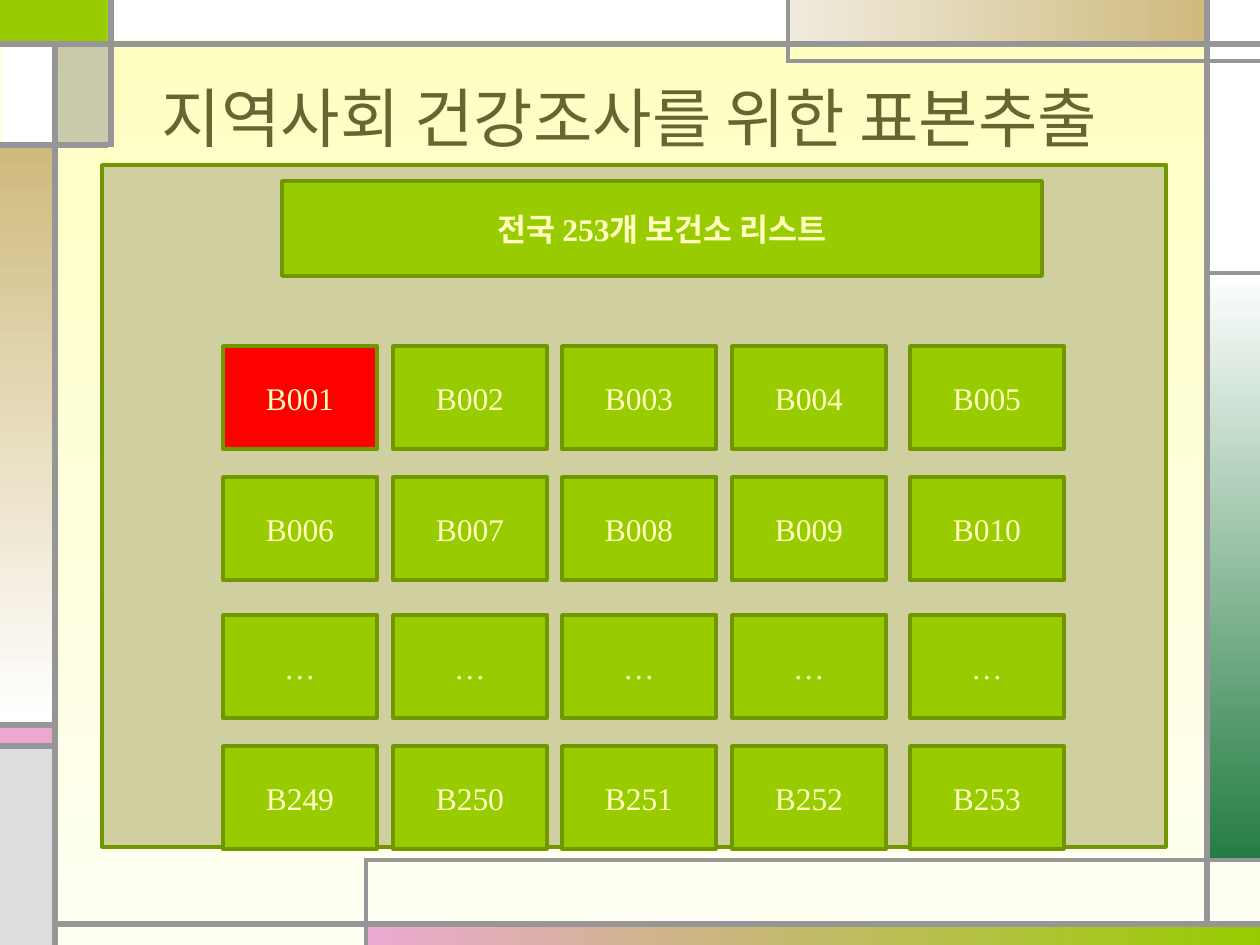
from lxml import etree
from pptx import Presentation
from pptx.dml.color import RGBColor
from pptx.enum.shapes import MSO_CONNECTOR, MSO_SHAPE
from pptx.enum.text import MSO_ANCHOR, PP_ALIGN
from pptx.oxml.ns import qn
from pptx.util import Pt

RECTANGLE = MSO_SHAPE.RECTANGLE
STRAIGHT = MSO_CONNECTOR.STRAIGHT
MIDDLE = MSO_ANCHOR.MIDDLE
CENTER = PP_ALIGN.CENTER

EMU_PER_PX = 914400 / 126
SLIDE_W, SLIDE_H = 1260, 945
RIGHTWARD, DOWNWARD = 0, 270  # gradient angles, counter-clockwise

LIME = RGBColor(0x99, 0xCC, 0x00)
DARK_LIME = RGBColor(0x71, 0x97, 0x00)
RED = RGBColor(0xFF, 0x00, 0x00)
CREAM = RGBColor(0xFF, 0xFF, 0xBF)
IVORY = RGBColor(0xFF, 0xFF, 0xF4)
KHAKI = RGBColor(0xCF, 0xCF, 0xA0)
OLIVE = RGBColor(0x66, 0x66, 0x33)
PINK = RGBColor(0xEB, 0xA9, 0xD0)
GREEN = RGBColor(0x24, 0x7C, 0x41)
SAND = RGBColor(0xCF, 0xBA, 0x7D)
PALE_SAND = RGBColor(0xF0, 0xEB, 0xDE)
WHITE = RGBColor(0xFF, 0xFF, 0xFF)
LIGHT_GRAY = RGBColor(0xDD, 0xDD, 0xDD)
GRAY = RGBColor(0x96, 0x96, 0x96)


def px(length):
    return round(length * EMU_PER_PX)


def fill_gradient(fill, start, end, angle):
    fill.gradient()
    fill.gradient_angle = angle
    for stop, color in zip(fill.gradient_stops, (start, end)):
        stop.color.rgb = color


class SlideBuilder:
    font = "Times New Roman"
    text_size = 18
    border_width = 2

    def __init__(self, slide):
        self.slide = slide

    def background(self, start, end):
        fill_gradient(self.slide.background.fill, start, end, DOWNWARD)

    def panel(self, box, color=None, gradient=None, opacity=None, border=None):
        panel = self.slide.shapes.add_shape(RECTANGLE, *map(px, box))
        panel.shadow.inherit = False
        if gradient:
            fill_gradient(panel.fill, *gradient)
        else:
            panel.fill.solid()
            panel.fill.fore_color.rgb = color
        if opacity:
            rgb = panel._element.spPr.find(".//" + qn("a:srgbClr"))
            etree.SubElement(rgb, qn("a:alpha"), val=str(opacity * 1000))
        if border:
            panel.line.color.rgb = border
            panel.line.width = Pt(self.border_width)
        else:
            panel.line.fill.background()
        return panel

    def rule(self, start, end, width):
        rule = self.slide.shapes.add_connector(STRAIGHT, *map(px, start + end))
        rule.line.color.rgb = GRAY
        rule.line.width = Pt(width)
        etree.SubElement(rule._element.spPr, qn("a:effectLst"))

    def set_text(self, frame, text, size, color, bold=False):
        frame.word_wrap = True
        frame.vertical_anchor = MIDDLE
        paragraph = frame.paragraphs[0]
        paragraph.text = text
        paragraph.alignment = CENTER
        paragraph.font.name = self.font
        paragraph.font.size = Pt(size)
        paragraph.font.bold = bold
        paragraph.font.color.rgb = color

    def label_box(self, box, text, color=LIME, bold=False):
        panel = self.panel(box, color, border=DARK_LIME)
        self.set_text(panel.text_frame, text, self.text_size, CREAM, bold)

    def title(self, box, text):
        title = self.slide.shapes.add_textbox(*map(px, box))
        self.set_text(title.text_frame, text, 36.9, OLIVE)


def draw_frame(builder):
    """Draw the coloured bands and grey rules around the slide's edge."""
    builder.panel((0, 0, 110, 43), LIME)
    builder.panel((368, 924, 892, 21), gradient=(PINK, LIME, RIGHTWARD))
    builder.panel((1207, 273, 53, 588), gradient=(WHITE, GREEN, DOWNWARD))
    builder.panel((0, 725, 53, 21), PINK)
    builder.panel((0, 747, 53, 198), LIGHT_GRAY)
    builder.panel((1207, 0, 53, 273), WHITE)
    builder.panel((788, 0, 420, 42), gradient=(PALE_SAND, SAND, RIGHTWARD))
    builder.panel((58, 42, 53, 103), GRAY, opacity=50)
    builder.panel((0, 145, 53, 577), gradient=(SAND, WHITE, DOWNWARD))
    builder.panel((1, 42, 53, 103), WHITE)
    builder.panel((108, 0, 679, 40), WHITE)

    thick, thin = 3, 2.25
    for start, end, width in (
        ((55, 945), (55, 42), thick),
        ((55, 924), (1260, 924), thick),
        ((1207, 924), (1207, 0), thick),
        ((0, 44), (1260, 44), thick),
        ((1260, 61), (788, 61), thin),
        ((788, 63), (788, 0), thin),
        ((1207, 273), (1260, 273), thin),
        ((111, 0), (111, 147), thick),
        ((108, 145), (0, 145), thick),
        ((366, 945), (366, 859), thin),
        ((364, 860), (1260, 860), thin),
        ((58, 725), (0, 725), thick),
        ((58, 746), (0, 746), thick),
    ):
        builder.rule(start, end, width)


def draw_health_centers(builder):
    builder.panel((102, 165, 1064, 682), KHAKI, border=DARK_LIME)
    columns = (223, 393, 562, 732, 910)
    rows = {
        346: [f"B{number:03}" for number in range(1, 6)],
        477: [f"B{number:03}" for number in range(6, 11)],
        615: ["…"] * 5,
        746: [f"B{number}" for number in range(249, 254)],
    }
    sampled = "B001"
    for top, centers in rows.items():
        for left, center in zip(columns, centers):
            color = RED if center == sampled else LIME
            builder.label_box((left, top, 154, 103), center, color)
    builder.label_box((282, 181, 760, 95), "전국 253개 보건소 리스트", bold=True)


def main():
    presentation = Presentation()
    presentation.slide_width = px(SLIDE_W)
    presentation.slide_height = px(SLIDE_H)
    blank = presentation.slide_layouts[6]
    builder = SlideBuilder(presentation.slides.add_slide(blank))
    builder.background(CREAM, IVORY)
    draw_frame(builder)
    draw_health_centers(builder)
    builder.title((63, 38, 1134, 157), "지역사회 건강조사를 위한 표본추출")
    presentation.save("out.pptx")


if __name__ == "__main__":
    main()
